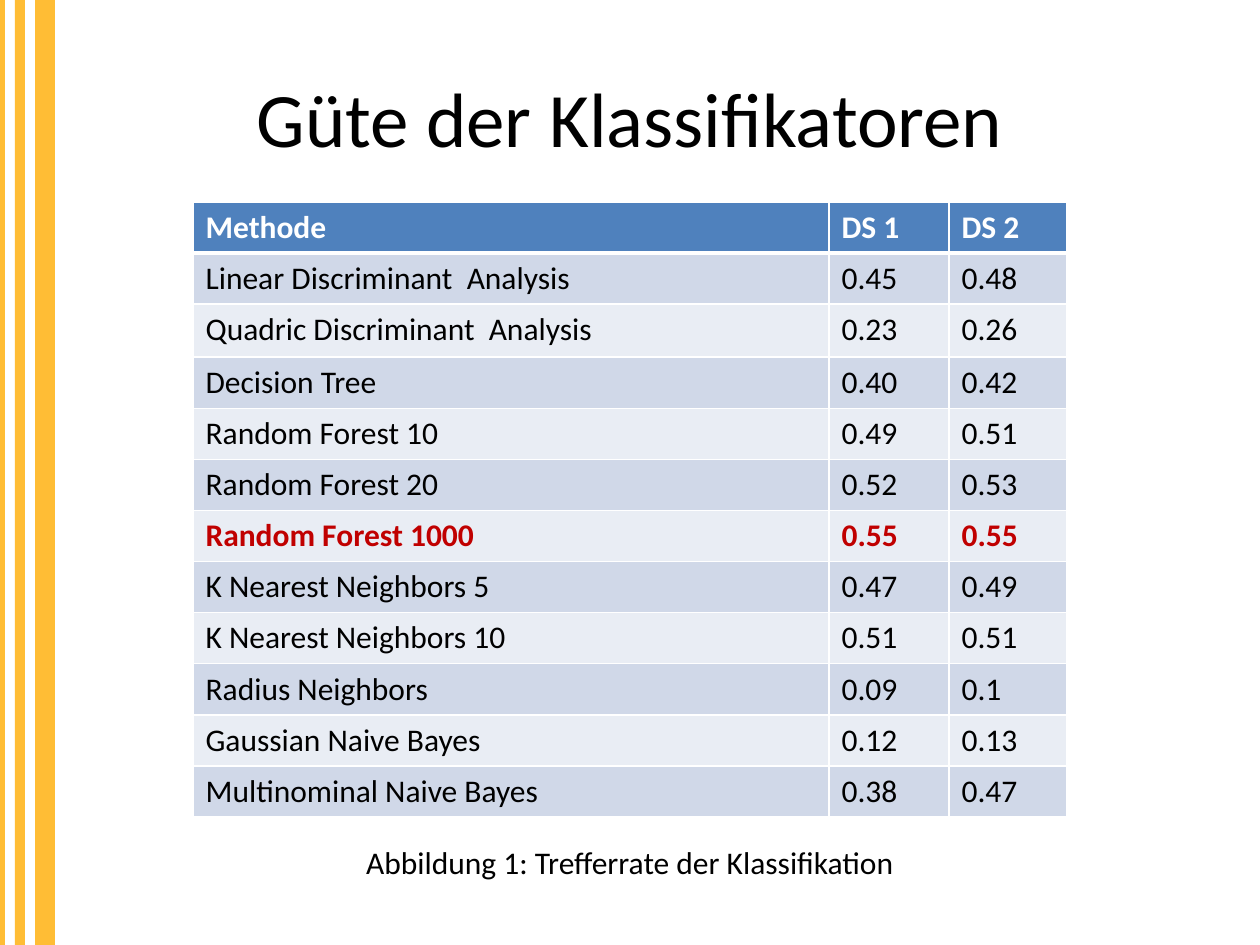
"""Build a slide with a table of classifier hit rates."""
from dataclasses import dataclass

from lxml import etree
from pptx import Presentation
from pptx import util as u
from pptx.dml.color import RGBColor
from pptx.enum import shapes, text
from pptx.oxml import ns


@dataclass(frozen=True)
class Theme:
    font: str = "Calibri"
    title_size: int = 44
    body_size: int = 18
    ink: str = "000000"
    paper: str = "FFFFFF"
    stripe: str = "FFBD35"
    header: str = "4F81BD"
    bands: tuple = ("D0D8E8", "E9EDF4")
    best: str = "C00000"


theme = Theme()
SCALE = 914400 / 126


def px(*lengths):
    return [u.Emu(round(length * SCALE)) for length in lengths]


def add_run(paragraph, content, size, color, bold=False):
    run = paragraph.add_run()
    run.text = content
    run.font.name = theme.font
    run.font.size = u.Pt(size)
    run.font.bold = bold
    run.font.color.rgb = RGBColor.from_string(color)


presentation = Presentation()
presentation.slide_width, presentation.slide_height = px(1260, 945)
slide = presentation.slides.add_slide(presentation.slide_layouts[5])

for left, width in ((35, 20), (15, 10), (-1, 6)):
    stripe = slide.shapes.add_shape(shapes.MSO_SHAPE.RECTANGLE, *px(left, 0, width, 945))
    stripe.shadow.inherit = False
    stripe.fill.solid()
    stripe.fill.fore_color.rgb = RGBColor.from_string(theme.stripe)
    stripe.line.fill.background()

title = slide.shapes.title
title.left, title.top, title.width, title.height = px(63, 38, 1134, 157)
title.text_frame.vertical_anchor = text.MSO_ANCHOR.MIDDLE
paragraph = title.text_frame.paragraphs[0]
paragraph.alignment = text.PP_ALIGN.CENTER
add_run(paragraph, "Güte der Klassifikatoren", theme.title_size, theme.ink)

rows = [
    ("Methode", "DS 1", "DS 2"),
    ("Linear Discriminant  Analysis", "0.45", "0.48"),
    ("Quadric Discriminant  Analysis", "0.23", "0.26"),
    ("Decision Tree", "0.40", "0.42"),
    ("Random Forest 10", "0.49", "0.51"),
    ("Random Forest 20", "0.52", "0.53"),
    ("Random Forest 1000", "0.55", "0.55"),
    ("K Nearest Neighbors 5", "0.47", "0.49"),
    ("K Nearest Neighbors 10", "0.51", "0.51"),
    ("Radius Neighbors", "0.09", "0.1"),
    ("Gaussian Naive Bayes", "0.12", "0.13"),
    ("Multinominal Naive Bayes", "0.38", "0.47"),
]
best_method = "Random Forest 1000"
column_widths = (636, 120, 118)
row_heights = [51] * len(rows)
row_heights[2] = 53

frame = slide.shapes.add_table(
    len(rows), len(column_widths), *px(193, 202, sum(column_widths), sum(row_heights))
)
table = frame.table
for column, width in zip(table.columns, px(*column_widths)):
    column.width = width

for row_index, (values, height) in enumerate(zip(rows, px(*row_heights))):
    table.rows[row_index].height = height
    is_header = row_index == 0
    is_best = values[0] == best_method
    fill = theme.header if is_header else theme.bands[(row_index - 1) % 2]
    color = theme.paper if is_header else theme.best if is_best else theme.ink
    borders = {"lnL": 1, "lnR": 1, "lnT": 3 if row_index == 1 else 1, "lnB": 3 if is_header else 1}
    for column_index, value in enumerate(values):
        cell = table.cell(row_index, column_index)
        add_run(cell.text_frame.paragraphs[0], value, theme.body_size, color, is_header or is_best)
        properties = cell._tc.get_or_add_tcPr()
        for tag, width in borders.items():
            line = etree.SubElement(properties, ns.qn(f"a:{tag}"), w=str(u.Pt(width)))
            solid = etree.SubElement(line, ns.qn("a:solidFill"))
            etree.SubElement(solid, ns.qn("a:srgbClr"), val=theme.paper)
        cell.fill.solid()
        cell.fill.fore_color.rgb = RGBColor.from_string(fill)

caption = slide.shapes.add_textbox(*px(223, 837, 814, 50))
caption.text_frame.word_wrap = True
caption.text_frame.auto_size = text.MSO_AUTO_SIZE.SHAPE_TO_FIT_TEXT
paragraph = caption.text_frame.paragraphs[0]
paragraph.alignment = text.PP_ALIGN.CENTER
add_run(paragraph, "Abbildung 1: Trefferrate der Klassifikation", theme.body_size, theme.ink)

presentation.save("out.pptx")
